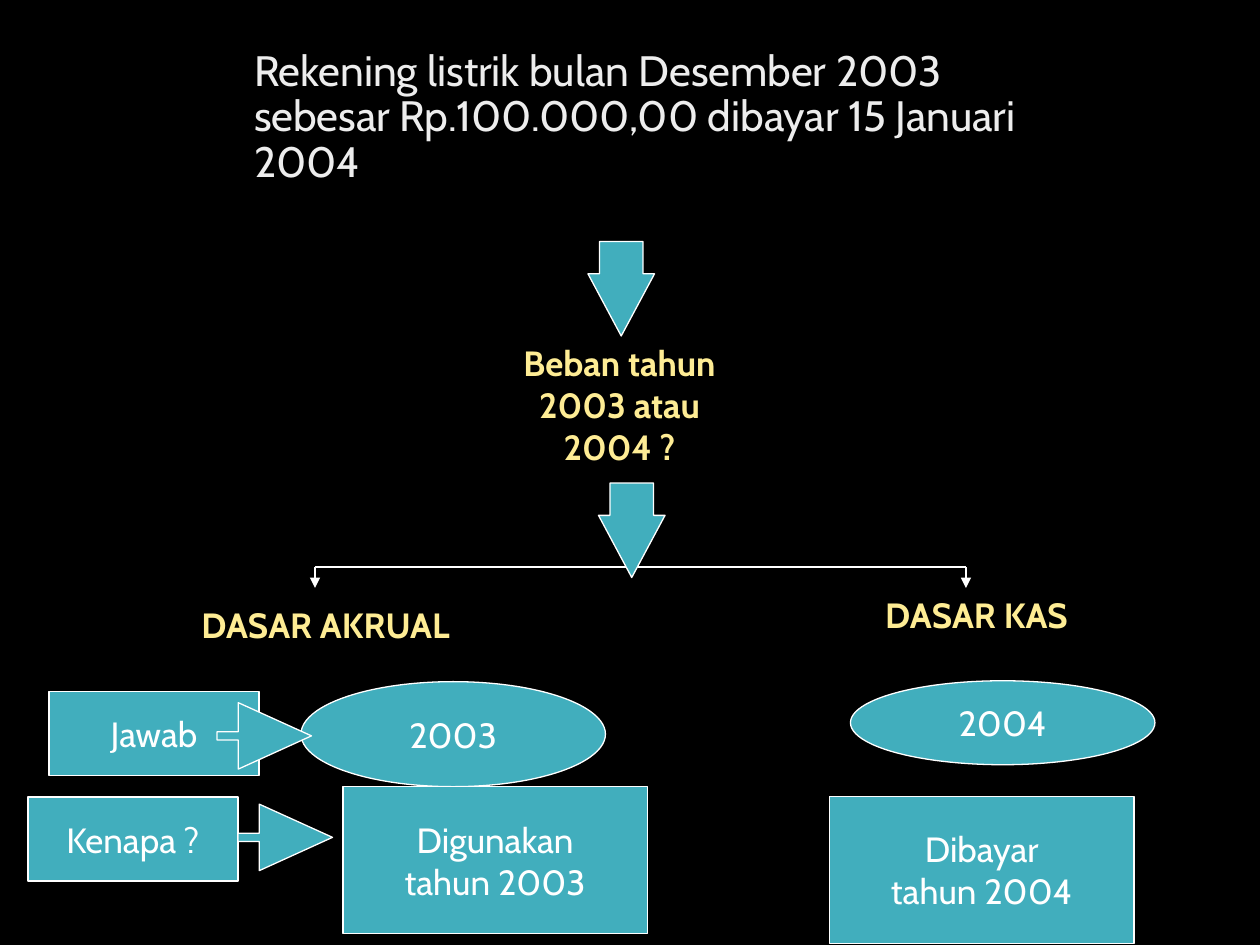
from dataclasses import dataclass

from lxml.etree import SubElement
from pptx import Presentation
from pptx.dml.color import RGBColor
from pptx.enum.shapes import MSO_CONNECTOR, MSO_SHAPE
from pptx.enum.text import MSO_ANCHOR, MSO_AUTO_SIZE, PP_ALIGN
from pptx.oxml.ns import qn
from pptx.slide import Slide
from pptx.text.text import TextFrame
from pptx.util import Pt

COLORS = {
    "background": "000000",
    "title": "EDEDED",
    "heading": "FEEC94",
    "fill": "41AEBD",
    "white": "FFFFFF",
}
FONT = "Cabin"
LINE_WIDTH = 0.75
ARROW_ADJUSTMENTS = {
    MSO_SHAPE.DOWN_ARROW: (0.654, 0.934),
    MSO_SHAPE.RIGHT_ARROW: (0.124, 1.101),
}


@dataclass
class Box:
    left: float
    top: float
    width: float
    height: float
    lines: tuple[str, ...] = ()
    kind: MSO_SHAPE = MSO_SHAPE.RECTANGLE

    @property
    def bounds(self) -> tuple[Pt, ...]:
        return tuple(Pt(n) for n in (self.left, self.top, self.width, self.height))


def color(name: str) -> RGBColor:
    return RGBColor.from_string(COLORS[name])


def write_lines(frame: TextFrame, lines: tuple[str, ...], ink: str,
                bold: bool = False, wrap: bool = True) -> None:
    frame.word_wrap = wrap
    frame.vertical_anchor = MSO_ANCHOR.MIDDLE
    frame.margin_left = frame.margin_right = Pt(6)
    frame.margin_top = frame.margin_bottom = Pt(3)
    frame.text = "\n".join(lines)
    for paragraph in frame.paragraphs:
        paragraph.alignment = PP_ALIGN.CENTER
        font = paragraph.font
        font.name, font.size, font.bold = FONT, Pt(20), bold
        font.color.rgb = color(ink)


def add_heading(slide: Slide, box: Box) -> None:
    heading = slide.shapes.add_textbox(*box.bounds)
    write_lines(heading.text_frame, box.lines, "heading", bold=True)


def add_filled(slide: Slide, box: Box) -> None:
    shape = slide.shapes.add_shape(box.kind, *box.bounds)
    shape.shadow.inherit = False
    shape.fill.solid()
    shape.fill.fore_color.rgb = color("fill")
    shape.line.color.rgb = color("white")
    shape.line.width = Pt(LINE_WIDTH)
    for index, value in enumerate(ARROW_ADJUSTMENTS.get(box.kind, ())):
        shape.adjustments[index] = value
    if box.lines:
        write_lines(shape.text_frame, box.lines, "white", wrap=False)


def add_line(slide: Slide, x1: float, y1: float, x2: float, y2: float,
             arrow: bool = False) -> None:
    line = slide.shapes.add_connector(
        MSO_CONNECTOR.STRAIGHT, Pt(x1), Pt(y1), Pt(x2), Pt(y2))
    line.line.color.rgb = color("white")
    line.line.width = Pt(LINE_WIDTH)
    properties = line.element.spPr
    if arrow:
        SubElement(properties.find(qn("a:ln")), qn("a:tailEnd"), type="triangle")
    SubElement(properties, qn("a:effectLst"))


def add_title(slide: Slide, box: Box) -> None:
    title = slide.shapes.title
    title.left, title.top, title.width, title.height = box.bounds
    frame = title.text_frame
    frame.text = box.lines[0]
    frame.word_wrap = True
    frame.auto_size = MSO_AUTO_SIZE.NONE
    frame.vertical_anchor = MSO_ANCHOR.MIDDLE
    paragraph = frame.paragraphs[0]
    paragraph.alignment = PP_ALIGN.LEFT
    paragraph.line_spacing = 0.9
    paragraph.font.name, paragraph.font.size = FONT, Pt(24.3)
    paragraph.font.color.rgb = color("title")


def down_arrow(left: float, top: float) -> Box:
    return Box(left, top, 38, 54, kind=MSO_SHAPE.DOWN_ARROW)


def right_arrow(left: float, top: float) -> Box:
    return Box(left, top, 54, 38, kind=MSO_SHAPE.RIGHT_ARROW)


def label(left: float, top: float, text: str) -> Box:
    return Box(left, top, 120, 48, (text,))


def answer(left: float, top: float, height: float, year: str) -> Box:
    return Box(left, top, 174, height, (year,), MSO_SHAPE.OVAL)


def reason(left: float, top: float, *lines: str) -> Box:
    return Box(left, top, 174, 84, lines)


TITLE = Box(138, 26.5, 480, 82, (
    "Rekening listrik bulan Desember 2003 sebesar Rp.100.000,00 "
    "dibayar 15 Januari 2004",))
HEADINGS = (
    Box(102, 312, 168, 90, ("DASAR AKRUAL",)),
    Box(474, 312, 168, 78, ("DASAR KAS",)),
    Box(270, 186, 168, 90, ("Beban tahun 2003 atau", "2004 ?")),
)
FLOW = (
    down_arrow(336, 138),
    down_arrow(342, 276),
    answer(172, 389.5, 60, "2003"),
    answer(486, 389, 48, "2004"),
    label(28, 395, "Jawab"),
    label(16, 455.5, "Kenapa ?"),
    right_arrow(124, 401.5),
    right_arrow(136, 459.5),
    reason(196, 449.5, "Digunakan", "tahun 2003"),
    reason(474, 455, "Dibayar", "tahun 2004"),
)
BRANCH_TOP, BRANCH_BOTTOM = 324, 336
BRANCH_ENDS = (180, 552)


def main() -> None:
    presentation = Presentation()
    presentation.slide_width, presentation.slide_height = Pt(720), Pt(540)
    slide = presentation.slides.add_slide(presentation.slide_layouts[5])
    slide.background.fill.solid()
    slide.background.fill.fore_color.rgb = color("background")

    # Transaction and headings
    add_title(slide, TITLE)
    for heading in HEADINGS:
        add_heading(slide, heading)

    # Branch to the two accounting bases
    add_line(slide, BRANCH_ENDS[0], BRANCH_TOP, BRANCH_ENDS[1], BRANCH_TOP)
    for x in BRANCH_ENDS:
        add_line(slide, x, BRANCH_TOP, x, BRANCH_BOTTOM, arrow=True)

    # Arrows, answers and reasons
    for box in FLOW:
        add_filled(slide, box)

    presentation.save("out.pptx")


if __name__ == "__main__":
    main()
